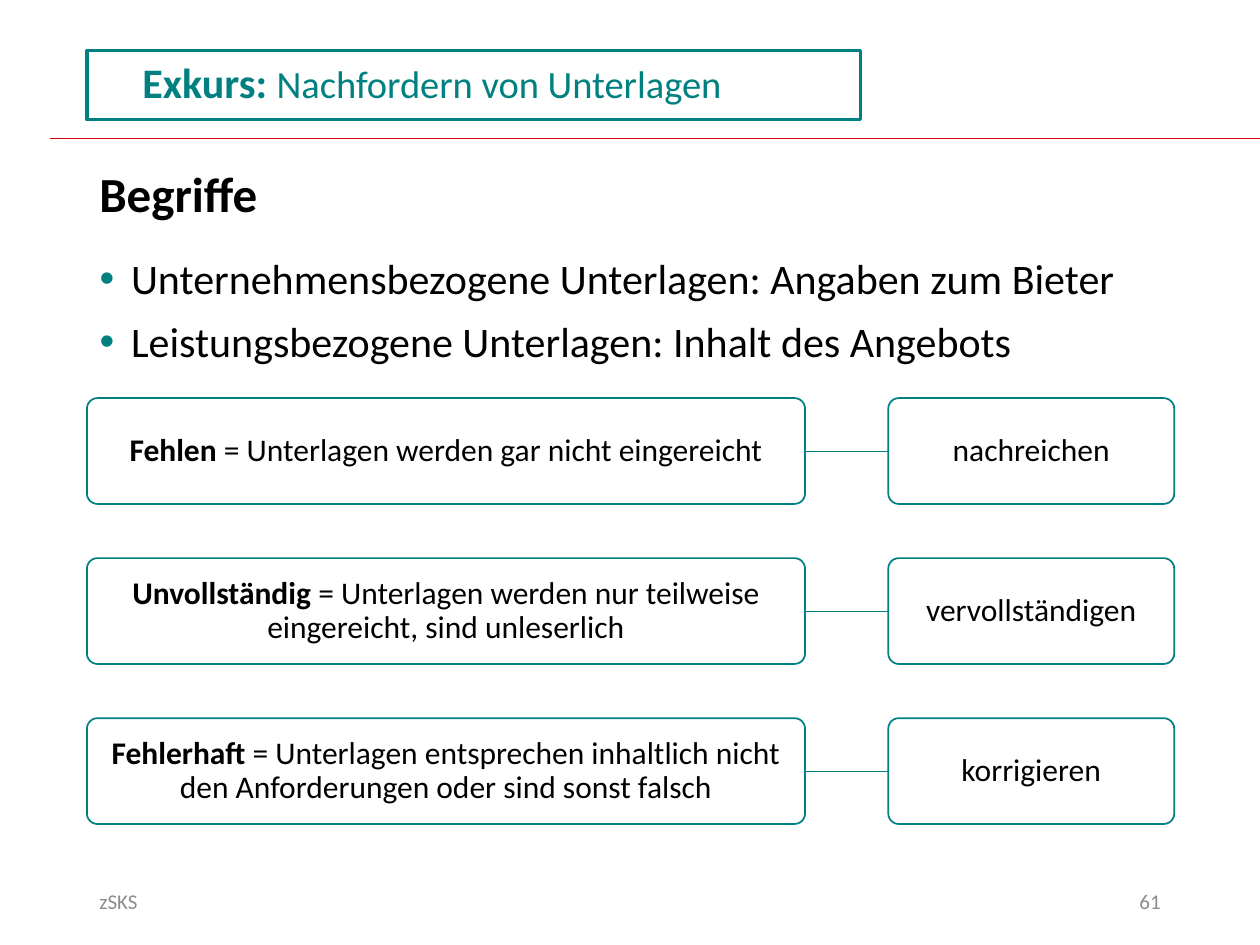
from lxml.etree import SubElement
from pptx import Presentation
from pptx.dml.color import RGBColor
from pptx.enum.shapes import MSO_CONNECTOR as Connector, MSO_SHAPE as Shape
from pptx.enum.text import MSO_ANCHOR as Anchor, MSO_AUTO_SIZE as AutoSize, PP_ALIGN as Align
from pptx.oxml.ns import qn
from pptx.util import Inches, Pt

TEAL, RED, BLACK, GRAY = "008080", "D90011", "000000", "8C8C8C"
LEFT, RIGHT_COLUMN = 0.69, 7.05
FIRST_ROW, ROW_STEP, CARD_HEIGHT = 3.16, 1.27, 0.84
TERMS = [
    ("Fehlen", " = Unterlagen werden gar nicht eingereicht", "nachreichen"),
    ("Unvollständig", " = Unterlagen werden nur teilweise eingereicht, sind unleserlich",
     "vervollständigen"),
    ("Fehlerhaft", " = Unterlagen entsprechen inhaltlich nicht den Anforderungen oder sind sonst falsch",
     "korrigieren"),
]
DOCUMENT_KINDS = [
    "Unternehmensbezogene Unterlagen: Angaben zum Bieter",
    "Leistungsbezogene Unterlagen: Inhalt des Angebots",
]


def rgb(color):
    return RGBColor.from_string(color)


def outline(item, color, width):
    item.line.color.rgb = rgb(color)
    item.line.width = Pt(width)


def place(item, left, top, width, height):
    item.left, item.top = Inches(left), Inches(top)
    item.width, item.height = Inches(width), Inches(height)


def write(paragraph, parts, color=BLACK, align=Align.LEFT):
    paragraph.alignment = align
    for text, size, bold in parts:
        run = paragraph.add_run()
        run.text = text
        run.font.name = "Calibri"
        run.font.size = Pt(size)
        run.font.bold = bold
        run.font.color.rgb = rgb(color)


def add_label(slide, box, text, size, color=BLACK, bold=False, align=Align.LEFT, anchor=Anchor.MIDDLE):
    frame = slide.shapes.add_textbox(*map(Inches, box)).text_frame
    frame.word_wrap = True
    frame.vertical_anchor = anchor
    write(frame.paragraphs[0], [(text, size, bold)], color, align)


def add_line(slide, start, end, color, width):
    line = slide.shapes.add_connector(Connector.STRAIGHT, *map(Inches, start + end))
    outline(line, color, width)
    SubElement(line._element.spPr, qn("a:effectLst"))
    return line


def add_card(slide, left, top, width, parts):
    card = slide.shapes.add_shape(
        Shape.ROUNDED_RECTANGLE, *map(Inches, (left, top, width, CARD_HEIGHT)))
    card.adjustments[0] = 0.1
    card.shadow.inherit = False
    card.fill.background()
    outline(card, TEAL, 1)
    frame = card.text_frame
    frame.word_wrap = True
    frame.vertical_anchor = Anchor.MIDDLE
    frame.margin_left = frame.margin_right = Inches(0.07)
    frame.margin_top = frame.margin_bottom = Inches(0.05)
    frame.paragraphs[0].line_spacing = 0.9
    write(frame.paragraphs[0], parts, align=Align.CENTER)
    return card


def fill_title(title):
    place(title, LEFT, 0.4, 6.14, 0.55)
    outline(title, TEAL, 2)
    frame = title.text_frame
    frame.auto_size = AutoSize.NONE
    frame.vertical_anchor = Anchor.MIDDLE
    frame.margin_left = Inches(0.44)
    frame.paragraphs[0].line_spacing = 0.9
    write(frame.paragraphs[0],
          [("Exkurs: ", 24, True), ("Nachfordern von Unterlagen", 22, False)], TEAL)


def add_bullet(paragraph):
    properties = paragraph._p.get_or_add_pPr()
    properties.set("marL", str(Inches(0.25)))
    properties.set("indent", str(-Inches(0.25)))
    bullet_color = SubElement(properties, qn("a:buClr"))
    SubElement(bullet_color, qn("a:srgbClr"), val=TEAL)
    SubElement(properties, qn("a:buFont"), typeface="Arial")
    SubElement(properties, qn("a:buChar"), char="•")


def fill_list(body):
    place(body, LEFT, 2, 8.62, 1.1)
    frame = body.text_frame
    frame.auto_size = AutoSize.NONE
    for index, kind in enumerate(DOCUMENT_KINDS):
        paragraph = frame.add_paragraph() if index else frame.paragraphs[0]
        add_bullet(paragraph)
        paragraph.line_spacing = 0.9
        paragraph.space_before = Pt(10 if index else 0)
        write(paragraph, [(kind, 24, False)])


def add_term_row(slide, top, term, meaning, remedy):
    definition = add_card(slide, LEFT, top, 5.7, [(term, 18, True), (meaning, 18, False)])
    action = add_card(slide, RIGHT_COLUMN, top, 2.27, [(remedy, 18, False)])
    middle = top + CARD_HEIGHT / 2
    link = add_line(slide, (LEFT + 5.7, middle), (RIGHT_COLUMN, middle), TEAL, 0.5)
    link.begin_connect(definition, 3)
    link.end_connect(action, 1)


def main():
    deck = Presentation()
    deck.slide_width, deck.slide_height = Inches(10), Inches(7.5)
    slide = deck.slides.add_slide(deck.slide_layouts[1])
    fill_title(slide.shapes.title)
    fill_list(slide.placeholders[1])
    add_line(slide, (0.4, 1.1), (10, 1.1), RED, 1)
    add_label(slide, (LEFT, 1.25, 8.54, 0.57), "Begriffe", 28, bold=True, anchor=Anchor.TOP)
    for row, term_row in enumerate(TERMS):
        add_term_row(slide, FIRST_ROW + row * ROW_STEP, *term_row)
    add_label(slide, (LEFT, 6.95, 2.25, 0.4), "zSKS", 12, GRAY)
    add_label(slide, (7.06, 6.95, 2.25, 0.4), "61", 12, GRAY, align=Align.RIGHT)
    deck.save("out.pptx")


if __name__ == "__main__":
    main()
